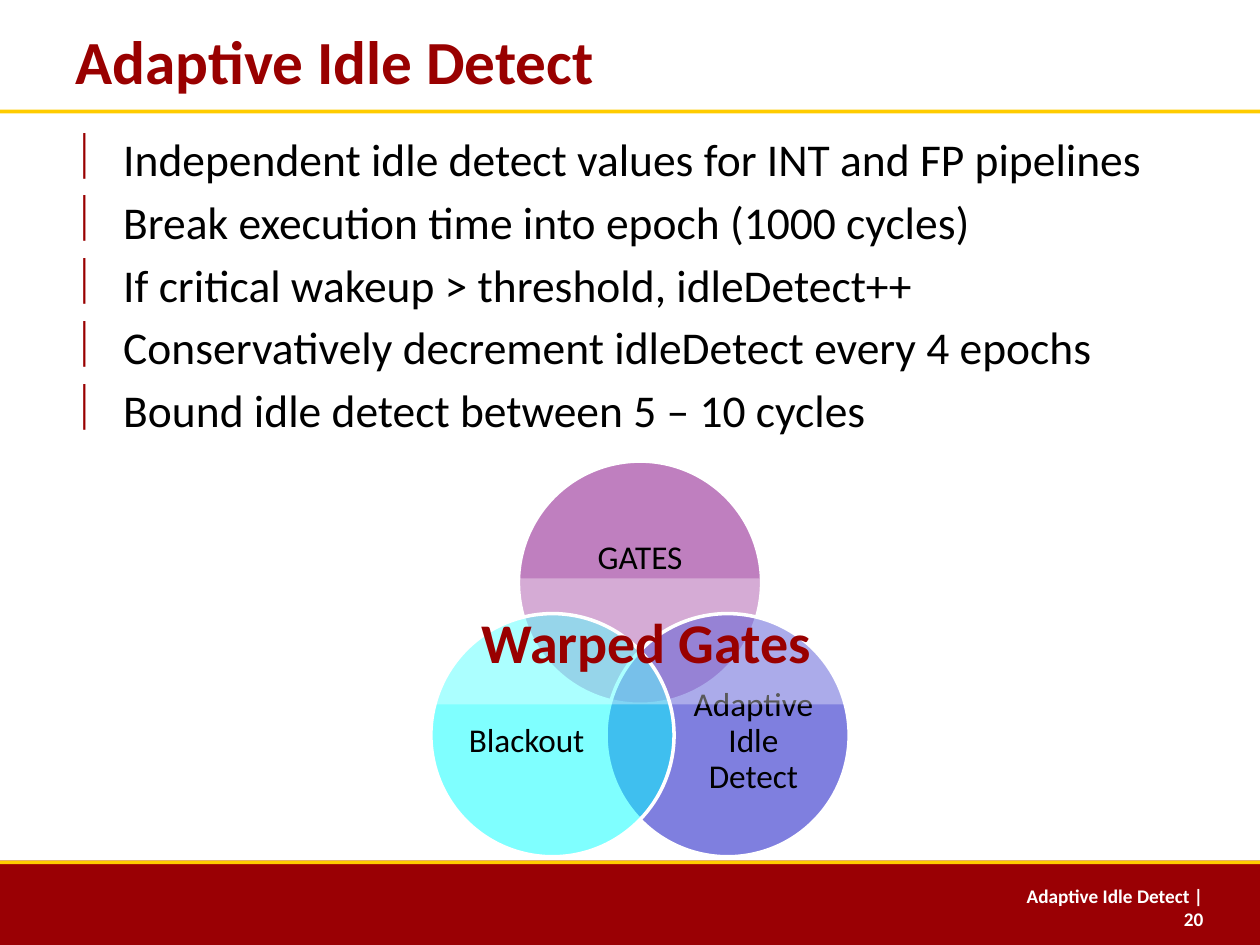
from dataclasses import dataclass
from lxml.etree import SubElement
from pptx import Presentation
from pptx.dml.color import RGBColor
from pptx.enum.shapes import MSO_SHAPE
from pptx.enum.text import MSO_ANCHOR, PP_ALIGN
from pptx.oxml.ns import qn
from pptx.util import Inches, Pt


@dataclass(frozen=True)
class Theme:
    font: str = "Calibri"
    red: str = "990000"
    bar: str = "9A0004"
    gold: str = "FFCC00"
    white: str = "FFFFFF"
    black: str = "000000"
    purple: str = "800080"
    blue: str = "0000C0"
    cyan: str = "00FFFF"
    head: int = 35
    body: int = 26
    label: int = 19
    banner: int = 32
    foot: int = 11


THEME = Theme()
WIDTH, HEIGHT = Inches(10), Inches(7.5)
TOPIC = "Adaptive Idle Detect"
POINTS = (
    "Independent idle detect values for INT and FP pipelines",
    "Break execution time into epoch (1000 cycles)",
    "If critical wakeup > threshold, idleDetect++",
    "Conservatively decrement idleDetect every 4 epochs",
    "Bound idle detect between 5 – 10 cycles",
)


def span(*shares):
    """Turn percentages of the slide's width into lengths."""
    return [round(WIDTH * share / 100) for share in shares]


def add_bullet(para, mark, color):
    props = para._p.get_or_add_pPr()
    indent = Inches(0.38)
    props.set("marL", str(indent))
    props.set("indent", str(-indent))
    tint = SubElement(props, qn("a:buClr"))
    SubElement(tint, qn("a:srgbClr")).set("val", color)
    SubElement(props, qn("a:buChar")).set("char", mark)


def write(frame, *lines, size, color=THEME.black, bold=False, align=PP_ALIGN.LEFT,
          anchor=MSO_ANCHOR.TOP, wrap=True, inset=None, gap=0, pitch=None, mark=None):
    frame.word_wrap = wrap
    frame.vertical_anchor = anchor
    if inset is not None:
        frame.margin_left = frame.margin_right = inset
        frame.margin_top = frame.margin_bottom = inset
    for i, line in enumerate(lines):
        para = frame.add_paragraph() if i else frame.paragraphs[0]
        if mark:
            add_bullet(para, mark, THEME.red)
        para.text = line
        para.alignment = align
        if i:
            para.space_before = Pt(gap)
        if pitch:
            para.line_spacing = pitch
        font = para.font
        font.name, font.size, font.bold = THEME.font, Pt(size), bold
        font.color.rgb = RGBColor.from_string(color)


def add_text(slide, area, *lines, **style):
    write(slide.shapes.add_textbox(*span(*area)).text_frame, *lines, **style)


def add_form(slide, kind, area, color, alpha=100, edge=None):
    form = slide.shapes.add_shape(kind, *span(*area))
    form.shadow.inherit = False
    form.fill.solid()
    form.fill.fore_color.rgb = RGBColor.from_string(color)
    if alpha < 100:
        tint = form._element.spPr.find(qn("a:solidFill")).find(qn("a:srgbClr"))
        SubElement(tint, qn("a:alpha")).set("val", str(alpha * 1000))
    if edge:
        form.line.color.rgb = RGBColor.from_string(edge)
        form.line.width = Pt(2)
    else:
        form.line.fill.background()
    return form


def add_frame(slide):
    """Draw the footer bar and the two gold rules."""
    foot = 68.3
    add_form(slide, MSO_SHAPE.RECTANGLE, (0, foot, 100, 6.7), THEME.bar)
    for top in (foot, 8.7):
        add_form(slide, MSO_SHAPE.RECTANGLE, (0, top, 100, 0.3), THEME.gold)


def add_venn(slide):
    """Draw three discs round a point, each with its label."""
    disc, mid, top = 19.3, 50.8, 36.6
    side, drop = 6.95, 12.1
    # shift from the middle, drop, colour, label, label area
    parts = (
        (0, 0, THEME.purple, "GATES", (mid - 7.05, 40, 14.1, 8.7)),
        (side, drop, THEME.blue, TOPIC, (54, 53.6, 11.6, 10.6)),
        (-side, drop, THEME.cyan, "Blackout", (36, 53.6, 11.6, 10.6)),
    )
    for shift, fall, color, label, area in parts:
        place = (mid + shift - disc / 2, top + fall, disc, disc)
        add_form(slide, MSO_SHAPE.OVAL, place, color, alpha=50, edge=THEME.white)
        add_text(slide, area, label, size=THEME.label, align=PP_ALIGN.CENTER,
                 anchor=MSO_ANCHOR.MIDDLE, inset=0, pitch=0.9)


def add_banner(slide):
    band = add_form(slide, MSO_SHAPE.RECTANGLE, (32.6, 45.9, 37.4, 10),
                    THEME.white, alpha=35)
    write(band.text_frame, "Warped Gates", size=THEME.banner, color=THEME.red,
          bold=True, align=PP_ALIGN.CENTER, anchor=MSO_ANCHOR.MIDDLE, wrap=False)


def main():
    deck = Presentation()
    deck.slide_width, deck.slide_height = WIDTH, HEIGHT
    slide = deck.slides.add_slide(deck.slide_layouts[6])
    add_frame(slide)
    add_text(slide, (5, 0.8, 90, 7.9), TOPIC, size=THEME.head, color=THEME.red,
             bold=True, anchor=MSO_ANCHOR.MIDDLE)
    add_text(slide, (5, 9.9, 90, 58.4), *POINTS, size=THEME.body, gap=4.7, mark="|")
    add_venn(slide)
    add_banner(slide)
    add_text(slide, (78.7, 69.7, 17.8, 3.5), f"{TOPIC} | 20", size=THEME.foot,
             color=THEME.white, bold=True, align=PP_ALIGN.RIGHT, wrap=False)
    deck.save("out.pptx")


if __name__ == "__main__":
    main()
